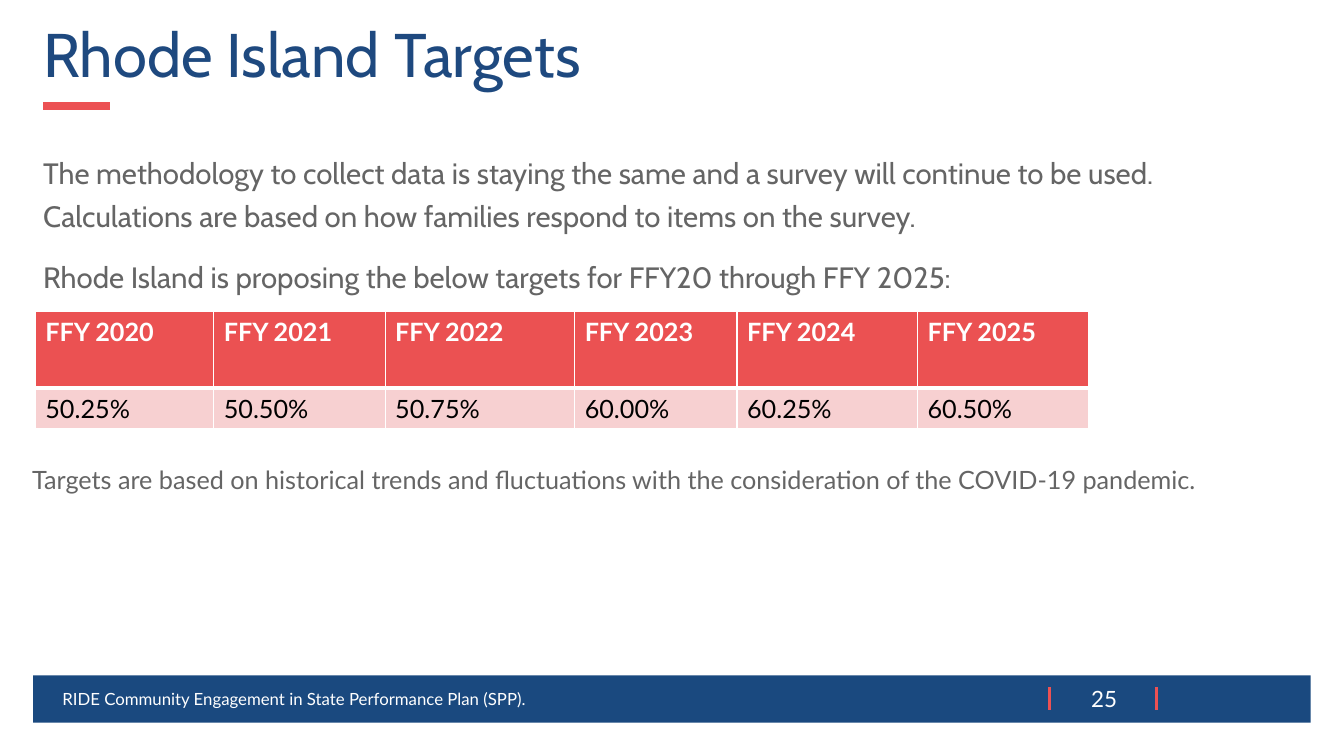
import pptx
import pptx.dml.color
import pptx.enum.shapes
import pptx.enum.text
import pptx.oxml
import pptx.oxml.ns
import pptx.util
from pptx.util import Inches

COLORS = {
    "navy": "1A497F",
    "title": "1E497F",
    "accent": "EC5153",
    "header": "EB5152",
    "row": "F7D0D1",
    "body": "656565",
    "white": "FFFFFF",
    "black": "000000",
}
COLUMN_WIDTHS = [1.77, 1.7, 1.88, 1.61, 1.79, 1.7]
ROW_HEIGHTS = [0.76, 0.4]
TARGETS = {
    "FFY 2020": "50.25%",
    "FFY 2021": "50.50%",
    "FFY 2022": "50.75%",
    "FFY 2023": "60.00%",
    "FFY 2024": "60.25%",
    "FFY 2025": "60.50%",
}


def rgb(name):
    """Return the named palette colour."""
    return pptx.dml.color.RGBColor.from_string(COLORS[name])


def style_font(paragraph, font_name, size, color, bold=False):
    """Set the font of a whole paragraph."""
    font = paragraph.font
    font.name = font_name
    font.size = pptx.util.Pt(size)
    font.bold = bold
    font.color.rgb = rgb(color)


def add_text(slide, box, lines, font_name, size, color, line_spacing=1.0, gap=0,
             anchor="TOP", align="LEFT"):
    """Add a wrapped text box with one paragraph per line."""
    shape = slide.shapes.add_textbox(*map(Inches, box))
    frame = shape.text_frame
    frame.word_wrap = True
    frame.vertical_anchor = getattr(pptx.enum.text.MSO_ANCHOR, anchor)
    for index, line in enumerate(lines):
        paragraph = frame.add_paragraph() if index else frame.paragraphs[0]
        paragraph.text = line
        paragraph.alignment = getattr(pptx.enum.text.PP_ALIGN, align)
        paragraph.line_spacing = line_spacing
        paragraph.space_before = pptx.util.Pt(gap if index else 0)
        paragraph.space_after = pptx.util.Pt(gap)
        style_font(paragraph, font_name, size, color)


def add_accent_line(slide, start, end, width):
    """Draw a straight accent line without a shadow."""
    line = slide.shapes.add_connector(
        pptx.enum.shapes.MSO_CONNECTOR.STRAIGHT, *map(Inches, (*start, *end)))
    line.line.color.rgb = rgb("accent")
    line.line.width = pptx.util.Pt(width)
    properties = line._element.spPr
    properties.append(properties.makeelement(pptx.oxml.ns.qn("a:effectLst"), {}))


def add_heading(slide, left, top, width, height):
    """Add the title and the short rule under it."""
    add_text(slide, (left, top, width, height), ["Rhode Island Targets"],
             "Cabin", 44, "title", line_spacing=0.9, anchor="MIDDLE")
    rule_left, rule_top = left + 0.1, top + height + 0.09
    add_accent_line(slide, (rule_left, rule_top), (rule_left + 0.66, rule_top), 6)


def add_body(slide, left, top, width, height):
    """Add the introduction above the table."""
    add_text(slide, (left, top, width, height), [
        "The methodology to collect data is staying the same and a survey will continue "
        "to be used. Calculations are based on how families respond to items on the survey.",
        "Rhode Island is proposing the below targets for FFY20 through FFY 2025:",
    ], "Cabin", 21, "body", line_spacing=1.23, gap=6)


def set_cell_borders(cell, widths):
    """Give a cell white borders, with widths in points keyed by side."""
    properties = cell._tc.get_or_add_tcPr()
    for index, side in enumerate("LRTB"):
        border = pptx.oxml.parse_xml(
            f'<a:ln{side} {pptx.oxml.ns.nsdecls("a")} w="{pptx.util.Pt(widths[side])}">'
            f'<a:solidFill><a:srgbClr val="{COLORS["white"]}"/></a:solidFill></a:ln{side}>')
        properties.insert(index, border)


def add_targets_table(slide, left, top):
    """Add the table of yearly targets."""
    shape = slide.shapes.add_table(
        len(ROW_HEIGHTS), len(COLUMN_WIDTHS), Inches(left), Inches(top),
        Inches(sum(COLUMN_WIDTHS)), Inches(sum(ROW_HEIGHTS)))
    table = shape.table
    for column, width in zip(table.columns, COLUMN_WIDTHS):
        column.width = Inches(width)
    for row, height in zip(table.rows, ROW_HEIGHTS):
        row.height = Inches(height)
    row_styles = [
        (TARGETS.keys(), "header", "white", True, {"L": 1, "R": 1, "T": 1, "B": 3}),
        (TARGETS.values(), "row", "black", False, {"L": 1, "R": 1, "T": 3, "B": 1}),
    ]
    for row, (values, fill, color, bold, borders) in zip(table.rows, row_styles):
        for cell, value in zip(row.cells, values):
            cell.text = value
            style_font(cell.text_frame.paragraphs[0], "Lato", 18, color, bold)
            cell.fill.solid()
            cell.fill.fore_color.rgb = rgb(fill)
            set_cell_borders(cell, borders)


def add_note(slide, left, top, width, height):
    """Add the remark below the table."""
    add_text(slide, (left, top, width, height), [
        "Targets are based on historical trends and fluctuations with the consideration "
        "of the COVID-19 pandemic.",
    ], "Lato", 18, "body", line_spacing=1.23, gap=6)


def add_footer(slide, left, top, width, height):
    """Add the footer bar with its caption and page number."""
    bar = slide.shapes.add_shape(
        pptx.enum.shapes.MSO_SHAPE.RECTANGLE, *map(Inches, (left, top, width, height)))
    bar.shadow.inherit = False
    bar.fill.solid()
    bar.fill.fore_color.rgb = rgb("navy")
    bar.line.fill.background()
    for offset in (10.08, 11.14):
        add_accent_line(slide, (left + offset, top + 0.12), (left + offset, top + 0.34), 2.25)
    add_text(slide, (left + 0.19, top + 0.03, 8.47, 0.4),
             ["RIDE Community Engagement in State Performance Plan (SPP)."],
             "Lato", 12, "white", anchor="MIDDLE")
    add_text(slide, (left + 10.3, top + 0.05, 0.64, 0.37), ["25"],
             "Lato", 16, "white", anchor="MIDDLE", align="CENTER")


def main():
    """Build the slide and save the presentation."""
    presentation = pptx.Presentation()
    presentation.slide_width = Inches(13.33)
    presentation.slide_height = Inches(7.5)
    slide = presentation.slides.add_slide(presentation.slide_layouts[6])
    add_heading(slide, 0.33, 0.19, 12.67, 0.77)
    add_body(slide, 0.33, 1.41, 12.67, 0.93)
    add_targets_table(slide, 0.35, 3.09)
    add_note(slide, 0.22, 4.49, 12.25, 0.44)
    add_footer(slide, 0.33, 6.7, 12.67, 0.47)
    presentation.save("out.pptx")


if __name__ == "__main__":
    main()
